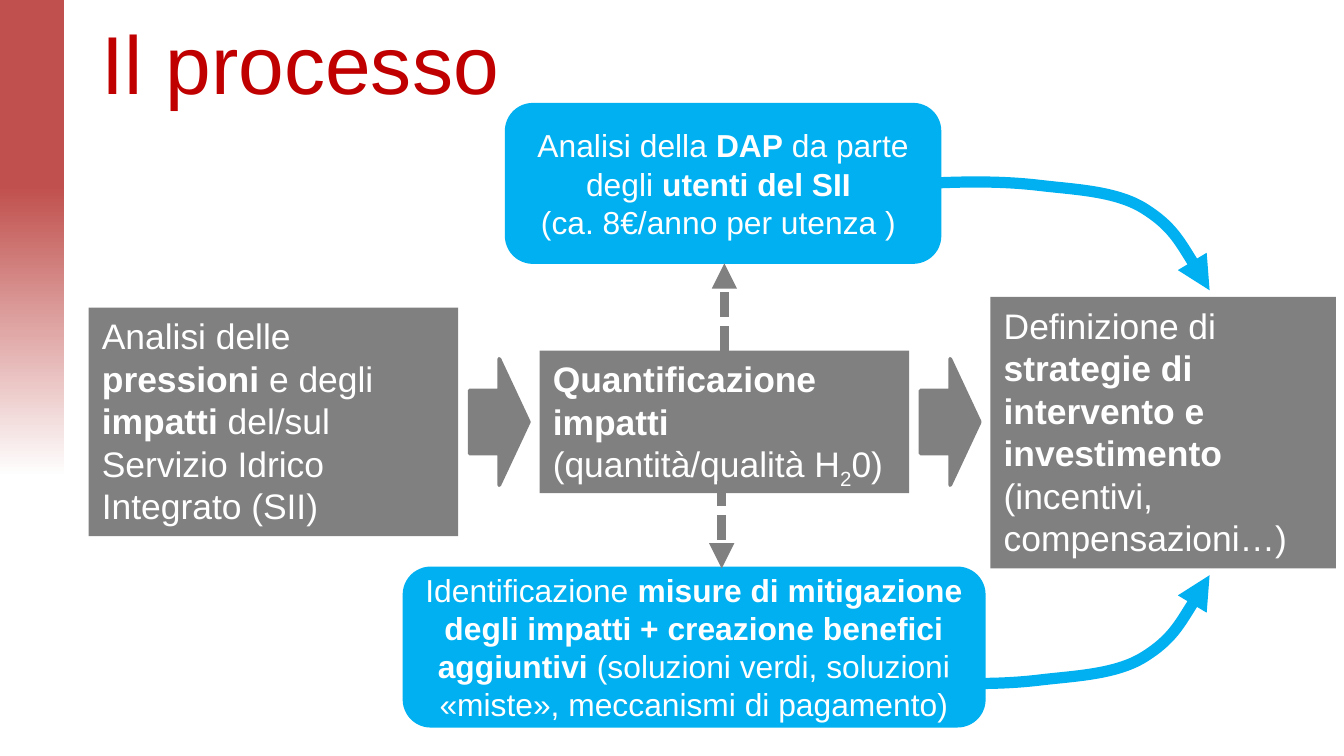
from dataclasses import dataclass

from lxml import etree
from pptx import Presentation
from pptx.dml.color import RGBColor
from pptx.enum.dml import MSO_LINE_DASH_STYLE as Dash
from pptx.enum.shapes import MSO_CONNECTOR as Connector, MSO_SHAPE as Shape
from pptx.enum.text import MSO_ANCHOR as Anchor, MSO_AUTO_SIZE as AutoSize, PP_ALIGN as Align
from pptx.oxml.ns import qn
from pptx.util import Inches, Pt


@dataclass(frozen=True)
class Theme:
    font: str = "Arial"
    title: str = "C00000"
    band: str = "C0504D"
    step: str = "808080"
    output: str = "00B0F0"
    white: str = "FFFFFF"
    title_size: int = 44
    step_size: int = 19
    output_size: int = 17


THEME = Theme()


def rgb(value):
    return RGBColor.from_string(value)


def place(page, kind, box, fill, line_width=0):
    shape = page.shapes.add_shape(kind, *map(Inches, box))
    shape.shadow.inherit = False
    shape.fill.solid()
    shape.fill.fore_color.rgb = rgb(fill)
    if line_width:
        style_line(shape, fill, line_width)
    else:
        shape.line.fill.background()
    return shape


def write(frame, paragraphs, size, color, align=Align.LEFT, anchor=Anchor.TOP, side=0.1):
    """Each paragraph is a list of (text, style); style is "", "bold" or "sub"."""
    frame.word_wrap = True
    frame.vertical_anchor = anchor
    frame.margin_left = frame.margin_right = Inches(side)
    frame.margin_top = frame.margin_bottom = Inches(0.05)
    for index, runs in enumerate(paragraphs):
        para = frame.add_paragraph() if index else frame.paragraphs[0]
        para.alignment = align
        for text, style in runs:
            span = para.add_run()
            span.text = text
            font = span.font
            font.name, font.size, font.bold = THEME.font, Pt(size), style == "bold"
            font.color.rgb = rgb(color)
            if style == "sub":
                font._element.set("baseline", "-25000")


def style_line(shape, color, width):
    shape.line.color.rgb = rgb(color)
    shape.line.width = Pt(width)


def add_arrowhead(shape):
    etree.SubElement(shape.line._get_or_add_ln(), qn("a:tailEnd"), type="triangle")


def side_band(page, box):
    """A bar turned upright, fading from its top to white."""
    left, top, width, height = box
    turned = (left + (width - height) / 2, top + (height - width) / 2, height, width)
    band = place(page, Shape.RECTANGLE, turned, THEME.band)
    band.rotation = 270
    band.fill.gradient()
    band.fill.gradient_angle = 180
    stops = band._element.spPr.find(qn("a:gradFill")).find(qn("a:gsLst"))
    for stop in list(stops):
        stops.remove(stop)
    for percent, color in ((0, THEME.band), (39, THEME.band), (100, THEME.white)):
        stop = etree.SubElement(stops, qn("a:gs"), pos=str(percent * 1000))
        etree.SubElement(stop, qn("a:srgbClr"), val=color)


def title(page, box, text):
    frame = page.shapes.add_textbox(*map(Inches, box)).text_frame
    write(frame, [[(text, "")]], THEME.title_size, THEME.title, anchor=Anchor.MIDDLE)


def step_box(page, box, paragraphs):
    frame = place(page, Shape.RECTANGLE, box, THEME.step).text_frame
    write(frame, paragraphs, THEME.step_size, THEME.white)
    frame.auto_size = AutoSize.SHAPE_TO_FIT_TEXT


def output_box(page, box, paragraphs):
    frame = place(page, Shape.ROUNDED_RECTANGLE, box, THEME.output, 2).text_frame
    write(frame, paragraphs, THEME.output_size, THEME.white, Align.CENTER, Anchor.MIDDLE, 0.04)


def curved_arrow(page, left, top, direction):
    """Bends right, then down (direction 1) or up (direction -1)."""
    offsets = [(0.25, -0.01), (0.5, -0.01), (0.75, 0.02), (1, 0.05), (1.31, 0.06),
               (1.52, 0.19), (1.73, 0.32), (1.87, 0.56), (2.01, 0.8)]
    points = [(Inches(left + x), Inches(top + direction * y)) for x, y in offsets]
    builder = page.shapes.build_freeform(Inches(left), Inches(top))
    builder.add_line_segments(points, close=False)
    curve = builder.convert_to_shape()
    curve.shadow.inherit = False
    curve.fill.background()
    style_line(curve, THEME.output, 6)
    add_arrowhead(curve)
    # Every three points become one cubic segment
    segments = list(curve._element.iter(qn("a:lnTo")))
    for start in range(0, len(segments), 3):
        group = segments[start:start + 3]
        cubic = etree.Element(qn("a:cubicBezTo"))
        group[0].addprevious(cubic)
        for segment in group:
            cubic.append(segment[0])
            segment.getparent().remove(segment)


def dashed_arrow(page, x, start, end):
    line = page.shapes.add_connector(
        Connector.STRAIGHT, Inches(x), Inches(start), Inches(x), Inches(end))
    style_line(line, THEME.step, 4.5)
    line.line.dash_style = Dash.SQUARE_DOT
    add_arrowhead(line)
    etree.SubElement(line._element.spPr, qn("a:effectLst"))


def main_steps(page, box):
    """Three grey steps at an equal pitch, with block arrows between them."""
    left, top, width, height = box
    last_width = 2.57
    pitch = (width - last_width) / 2
    steps = [
        (0.08, 2.75, 1.7, [[("Analisi delle ", ""), ("pressioni", "bold"), (" e degli ", ""),
                            ("impatti ", "bold"),
                            ("del/sul Servizio Idrico Integrato (SII)", "")]]),
        (0.4, 2.75, 1.06, [[("Quantificazione impatti", "bold")],
                           [("(quantità/qualità H", ""), ("2", "sub"), ("0)", "")]]),
        (0, last_width, height, [[("Definizione di ", ""),
                                  ("strategie di intervento e investimento ", "bold"),
                                  ("(incentivi, compensazioni…)", "")]]),
    ]
    for index, (drop, step_width, step_height, paragraphs) in enumerate(steps):
        x = left + index * pitch
        if index:
            place(page, Shape.RIGHT_ARROW, (x - 0.52, top + 0.46, 0.44, 0.94), THEME.step, 2)
        step_box(page, (x, top + drop, step_width, step_height), paragraphs)


def outputs(page, box):
    """Blue results above and below the steps, with the arrows that link them."""
    left, top, width, height = box
    box_height = 1.17
    output_box(page, (left + 0.76, top, 3.22, box_height), [
        [("Analisi della ", ""), ("DAP", "bold"), (" da parte degli ", ""),
         ("utenti del SII ", "bold")],
        [("(ca. 8€/anno per utenza ) ", "")]])
    output_box(page, (left, top + height - box_height, 4.31, box_height), [
        [("Identificazione ", ""),
         ("misure di mitigazione degli impatti + creazione benefici aggiuntivi ", "bold"),
         ("(soluzioni verdi, soluzioni «miste», meccanismi di pagamento)", "")]])
    curved_arrow(page, left + width - 2.01, top + 0.58, 1)
    curved_arrow(page, left + width - 2.01, top + height - 0.32, -1)
    dashed_arrow(page, left + 2.38, top + 1.83, top + 1.18)
    dashed_arrow(page, left + 2.36, top + 2.8, top + 3.45)


def main():
    deck = Presentation()
    deck.slide_width = Inches(10)
    deck.slide_height = deck.slide_width * 9 // 16
    page = deck.slides.add_slide(deck.slide_layouts[6])
    side_band(page, (0, 0, 0.48, 3.55))
    title(page, (0.66, -0.01, 8.84, 0.94), "Il processo")
    main_steps(page, (0.66, 2.21, 9.28, 2.02))
    outputs(page, (3.01, 0.78, 5.99, 4.62))
    deck.save("out.pptx")


if __name__ == "__main__":
    main()
